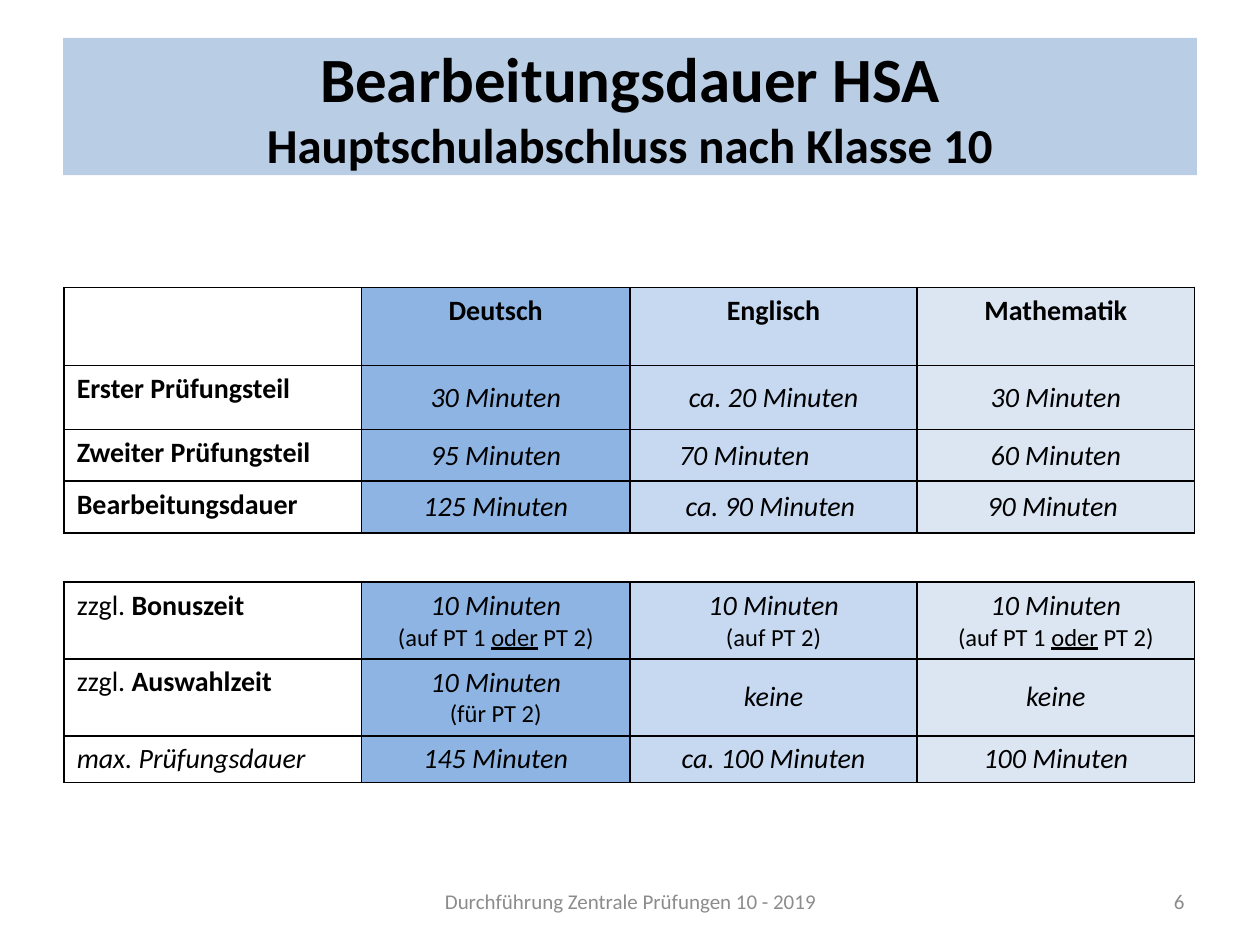
"""Build the slide on working times for the HSA exams: title, two tables and footer."""
from lxml.etree import fromstring
from pptx import Presentation
from pptx.dml.color import RGBColor
from pptx.enum.text import MSO_ANCHOR, PP_ALIGN
from pptx.util import Inches, Pt

BLACK = RGBColor(0x00, 0x00, 0x00)
GREY = RGBColor(0x8C, 0x8C, 0x8C)
TITLE_BLUE = RGBColor(0xB9, 0xCD, 0xE5)
COLUMN_FILLS = [None, RGBColor(0x8E, 0xB4, 0xE3), RGBColor(0xC6, 0xD9, 0xF1), RGBColor(0xDC, 0xE6, 0xF2)]
COLUMN_WIDTHS = [2.36, 2.13, 2.28, 2.2]
NS = "http://schemas.openxmlformats.org/drawingml/2006/main"
BORDER = ('<a:{} xmlns:a="' + NS + '" w="12700"><a:solidFill><a:srgbClr val="000000"/>'
          '</a:solidFill></a:{}>')


def style(r, size, color=BLACK, bold=False, italic=False, underline=False):
    r.font.name = "Calibri"
    r.font.size = Pt(size)
    r.font.color.rgb = color
    r.font.bold = bold
    r.font.italic = italic
    r.font.underline = underline


def add_grid(slide, top, heights, rows):
    table = slide.shapes.add_table(len(rows), len(COLUMN_WIDTHS), Inches(0.51), Inches(top),
                                   Inches(sum(COLUMN_WIDTHS)), Inches(sum(heights))).table
    table.first_row = table.horz_banding = False
    for column, width in zip(table.columns, COLUMN_WIDTHS):
        column.width = Inches(width)
    for i, (height, row) in enumerate(zip(heights, rows)):
        table.rows[i].height = Inches(height)
        for j, paragraphs in enumerate(row):
            cell = table.cell(i, j)
            if COLUMN_FILLS[j] is None:
                cell.fill.background()
            else:
                cell.fill.solid()
                cell.fill.fore_color.rgb = COLUMN_FILLS[j]
            for k, side in enumerate(["lnL", "lnR", "lnT", "lnB"]):
                cell._tc.get_or_add_tcPr().insert(k, fromstring(BORDER.format(side, side)))
            is_header = paragraphs in HEADER
            cell.vertical_anchor = MSO_ANCHOR.TOP if j == 0 or is_header else MSO_ANCHOR.MIDDLE
            for k, pieces in enumerate(paragraphs):
                p = cell.text_frame.paragraphs[0] if k == 0 else cell.text_frame.add_paragraph()
                p.alignment = PP_ALIGN.CENTER if j else PP_ALIGN.LEFT
                for text, flags in pieces:
                    r = p.add_run()
                    r.text = text
                    style(r, 14 if "s" in flags else 16, bold="b" in flags,
                          italic="i" in flags, underline="u" in flags)
    return table


HEADER = [[], [[("Deutsch", "b")]], [[("Englisch", "b")]], [[("Mathematik", "b")]]]
PARTS = [
    ("Erster Prüfungsteil", "30 Minuten", "ca. 20 Minuten", "30 Minuten"),
    ("Zweiter Prüfungsteil", "95 Minuten", "70 Minuten", "60 Minuten"),
    ("Bearbeitungsdauer", "125 Minuten", "ca. 90 Minuten ", "90 Minuten "),
]
TOTALS = ["max. Prüfungsdauer", "145 Minuten", "ca. 100 Minuten", "100 Minuten"]
TEN = [("10 Minuten", "i")]
EITHER = [TEN, [("(auf PT 1 ", "s"), ("oder", "su"), (" PT 2)", "s")]]
NONE = [[("keine", "i")]]

prs = Presentation()
prs.slide_width, prs.slide_height = Inches(10), Inches(7.5)
s = prs.slides.add_slide(prs.slide_layouts[5])

title = s.shapes.title
title.left, title.top, title.width, title.height = Inches(0.5), Inches(0.3), Inches(9), Inches(1.09)
title.fill.solid()
title.fill.fore_color.rgb = TITLE_BLUE
tf = title.text_frame
tf.text = "Bearbeitungsdauer HSA\vHauptschulabschluss nach Klasse 10"
tf.vertical_anchor = MSO_ANCHOR.MIDDLE
tf.paragraphs[0].alignment = PP_ALIGN.CENTER
for r, size in zip(tf.paragraphs[0].runs, [36, 27.9]):
    style(r, size, bold=True)

part_rows = [[[[(text, "i" if j else "b")]] for j, text in enumerate(row)] for row in PARTS]
parts = add_grid(s, 2.28, [0.62, 0.51, 0.41, 0.41], [HEADER] + part_rows)
p = parts.cell(2, 2).text_frame.paragraphs[0]
p.alignment = PP_ALIGN.LEFT
p._p.get_or_add_pPr().set("marL", str(Inches(0.29)))

add_grid(s, 4.62, [0.61, 0.61, 0.37], [
    [[[("zzgl. ", ""), ("Bonuszeit", "b")]], EITHER, [TEN, [("(auf PT 2)", "s")]], EITHER],
    [[[("zzgl.", ""), (" Auswahlzeit", "b")]], [TEN, [("(für PT 2)", "s")]], NONE, NONE],
    [[[(text, "i")]] for text in TOTALS],
])

for text, left, width, align in [
    ("Durchführung Zentrale Prüfungen 10 - 2019", 3.42, 3.17, PP_ALIGN.CENTER),
    ("6", 7.17, 2.33, PP_ALIGN.RIGHT),
]:
    tf = s.shapes.add_textbox(Inches(left), Inches(6.95), Inches(width), Inches(0.4)).text_frame
    tf.word_wrap = True
    tf.vertical_anchor = MSO_ANCHOR.MIDDLE
    tf.text = text
    tf.paragraphs[0].alignment = align
    style(tf.paragraphs[0].runs[0], 12, GREY)

prs.save("out.pptx")
